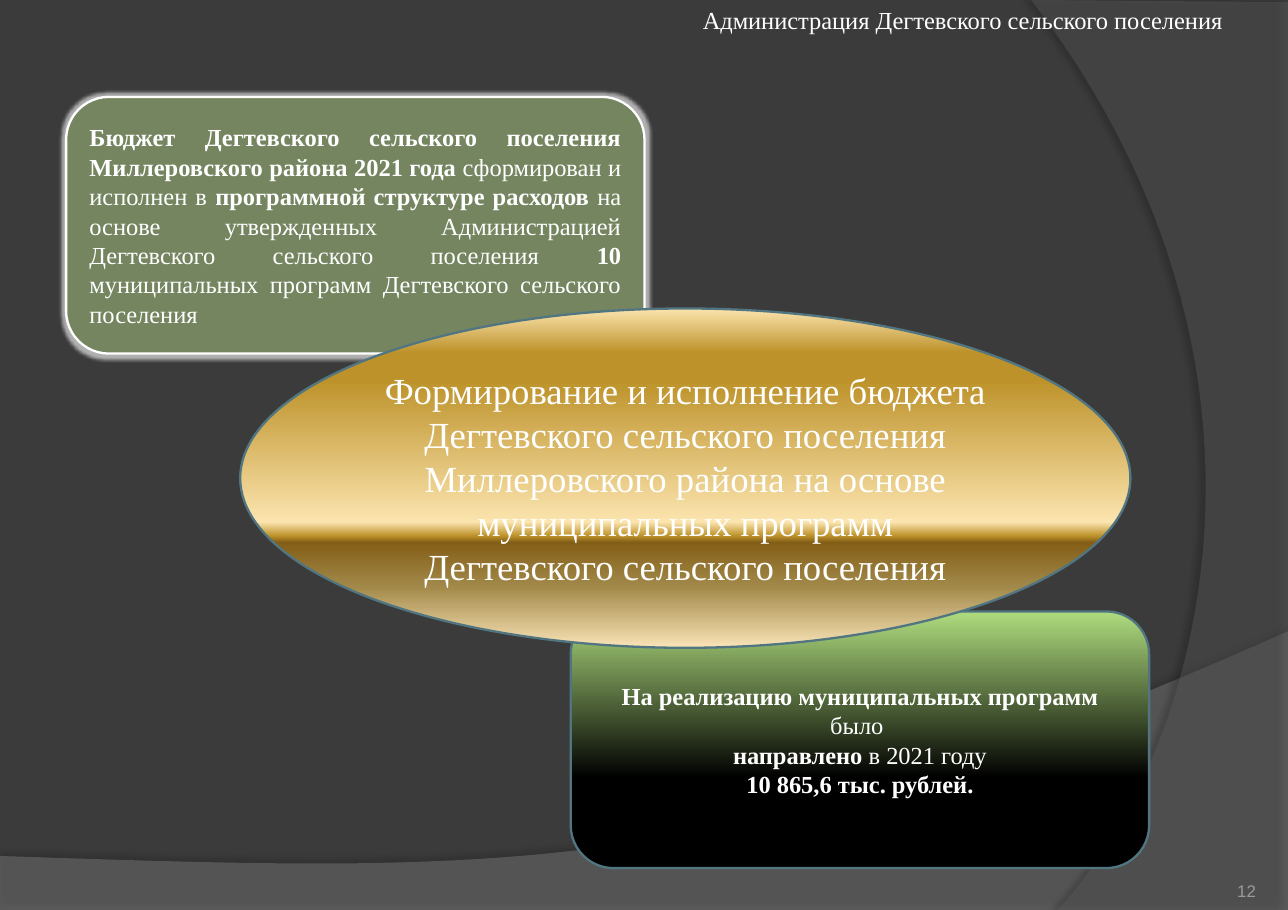
from lxml.etree import SubElement
from pptx import Presentation
from pptx.dml.color import RGBColor
from pptx.enum.shapes import MSO_SHAPE
from pptx.enum.text import MSO_ANCHOR, PP_ALIGN
from pptx.oxml.ns import qn
from pptx.util import Inches, Pt

WIDTH, HEIGHT = 11.69, 8.26
SERIF = "Times New Roman"
WHITE, TEAL = "FFFFFF", "517682"
GOLD = [(0, "FBE4AE"), (13, "BD922A"), (21, "BD922A"), (63, "FBE4AE"),
        (67, "BD922A"), (69, "835E17"), (82, "A28949"), (100, "FAE3B7")]
GREEN_TO_BLACK = [(0, "AFDC7E"), (65, "000000"), (100, "000000")]


def rgb(value):
    return RGBColor.from_string(value)


def add_node(parent, tag, **attrs):
    return SubElement(parent, qn(tag), {k: str(v) for k, v in attrs.items()})


def add_color(parent, value, alpha=100):
    color = add_node(parent, "a:srgbClr", val=value)
    if alpha < 100:
        add_node(color, "a:alpha", val=alpha * 1000)


def set_gradient(shape, stops):
    """Fill from top to bottom with (percent, colour) stops."""
    shape.fill.gradient()
    shape.fill.gradient_angle = 270
    stop_list = shape._element.spPr.find(".//" + qn("a:gsLst"))
    for old in list(stop_list):
        stop_list.remove(old)
    for percent, color in stops:
        add_color(add_node(stop_list, "a:gs", pos=percent * 1000), color)


def add_effect(shape, tag, color, alpha, **attrs):
    shape.shadow.inherit = False
    effects = shape._element.spPr.find(qn("a:effectLst"))
    add_color(add_node(effects, tag, **attrs), color, alpha)


def cubic(p0, p1, p2, p3, steps=48):
    """Points along a Bezier curve, without its start."""
    for i in range(1, steps + 1):
        t = i / steps
        u = 1 - t
        yield tuple(u**3 * a + 3 * u * u * t * b + 3 * u * t * t * c + t**3 * d
                    for a, b, c, d in zip(p0, p1, p2, p3))


def add_sweep(slide, corners, curve, color, alpha, shadow):
    """Translucent backdrop with straight corners and one curved edge."""
    points = [*corners, *cubic(corners[-1], *curve)]
    points = [(Inches(x), Inches(y)) for x, y in points]
    builder = slide.shapes.build_freeform(*points[0], scale=1.0)
    builder.add_line_segments(points[1:], close=True)
    s = builder.convert_to_shape()
    s.fill.solid()
    s.fill.fore_color.rgb = rgb(color)
    add_node(s._element.spPr.find(".//" + qn("a:srgbClr")), "a:alpha", val=alpha * 1000)
    s.line.fill.background()
    opacity, distance, direction = shadow
    add_effect(s, "a:outerShdw", "000000", opacity, blurRad=Pt(4), dist=Pt(distance),
               dir=direction * 60000, algn="ctr", rotWithShape=0)


def write(shape, paragraphs, size, align, anchor=MSO_ANCHOR.MIDDLE, margins=(0.1, 0.05),
          font=SERIF, color=WHITE):
    """Each paragraph is a list of (text, bold) runs."""
    tf = shape.text_frame
    x, y = map(Inches, margins)
    frame = {"word_wrap": True, "vertical_anchor": anchor, "margin_left": x,
             "margin_right": x, "margin_top": y, "margin_bottom": y}
    for name, value in frame.items():
        setattr(tf, name, value)
    for i, runs in enumerate(paragraphs):
        p = tf.paragraphs[0] if i == 0 else tf.add_paragraph()
        p.alignment = align
        for text, bold in runs:
            r = p.add_run()
            r.text = text
            for name, value in {"name": font, "size": Pt(size), "bold": bold}.items():
                setattr(r.font, name, value)
            r.font.color.rgb = rgb(color)


def add_panel(slide, kind, box, fill, line, paragraphs, size=16, align=PP_ALIGN.CENTER):
    """Outlined shape with text; fill is a colour or a list of gradient stops."""
    s = slide.shapes.add_shape(kind, *map(Inches, box))
    s.shadow.inherit = False
    if isinstance(fill, str):
        s.fill.solid()
        s.fill.fore_color.rgb = rgb(fill)
    else:
        set_gradient(s, fill)
    s.line.color.rgb = rgb(line)
    s.line.width = Pt(1.5)
    write(s, paragraphs, size, align)
    return s


def add_label(slide, box, text, size, align, **style):
    s = slide.shapes.add_textbox(*map(Inches, box))
    write(s, [[(text, False)]], size, align, **style)


def draw_backdrop(slide):
    slide.background.fill.solid()
    slide.background.fill.fore_color.rgb = rgb("3B3B3B")
    add_sweep(slide, [(0, 7.77), (0, HEIGHT), (WIDTH, HEIGHT), (WIDTH, 5.73)],
              [(6.54, 8.03), (4.57, 7.92), (0, 7.77)], "7F7F7F", 45, (35, 3.5, 270))
    add_sweep(slide, [(WIDTH, 0.02), (WIDTH, HEIGHT), (9.6, HEIGHT)],
              [(10.93, 6.82), (11.9, 3.31), (9.36, 0)], "5E5E5E", 40, (45, 4, 180))


def draw_budget(slide):
    card = (5.25, 2.33)
    add_panel(slide, MSO_SHAPE.ROUNDED_RECTANGLE, (5.18, 5.55, *card), GREEN_TO_BLACK, TEAL, [
        [("На реализацию муниципальных программ ", True), ("было ", False)],
        [("направлено", True), (" в 2021 году", False)],
        [("10 865,6 тыс. рублей.", True)],
    ])
    basis = add_panel(slide, MSO_SHAPE.ROUNDED_RECTANGLE, (0.6, 0.88, *card), "748560", WHITE, [[
        ("Бюджет Дегтевского сельского поселения Миллеровского района 2021 года ", True),
        ("сформирован и исполнен в ", False),
        ("программной структуре расходов", True),
        (" на основе утвержденных Администрацией Дегтевского сельского поселения ", False),
        ("10", True),
        (" муниципальных программ Дегтевского сельского поселения", False),
    ]], align=PP_ALIGN.JUSTIFY)
    add_effect(basis, "a:glow", WHITE, 60, rad=Pt(5))
    add_panel(slide, MSO_SHAPE.OVAL, (2.18, 2.8, 8.08, 3.08), GOLD, TEAL, [[
        ("Формирование и исполнение бюджета Дегтевского сельского поселения "
         "Миллеровского района на основе муниципальных программ "
         "Дегтевского сельского поселения", False),
    ]], size=24)


def draw_labels(slide):
    add_label(slide, (10.43, 7.74, 0.97, 0.44), "12", 11, PP_ALIGN.RIGHT,
              anchor=MSO_ANCHOR.BOTTOM, margins=(0, 0), font="Arial", color="9D9B9A")
    add_label(slide, (6.28, 0, 5.42, 0.37), "Администрация Дегтевского сельского поселения",
              16, PP_ALIGN.LEFT, anchor=MSO_ANCHOR.TOP)


def main():
    prs = Presentation()
    prs.slide_width, prs.slide_height = Inches(WIDTH), Inches(HEIGHT)
    slide = prs.slides.add_slide(prs.slide_layouts[6])
    draw_backdrop(slide)
    draw_budget(slide)
    draw_labels(slide)
    prs.save("out.pptx")


if __name__ == "__main__":
    main()
